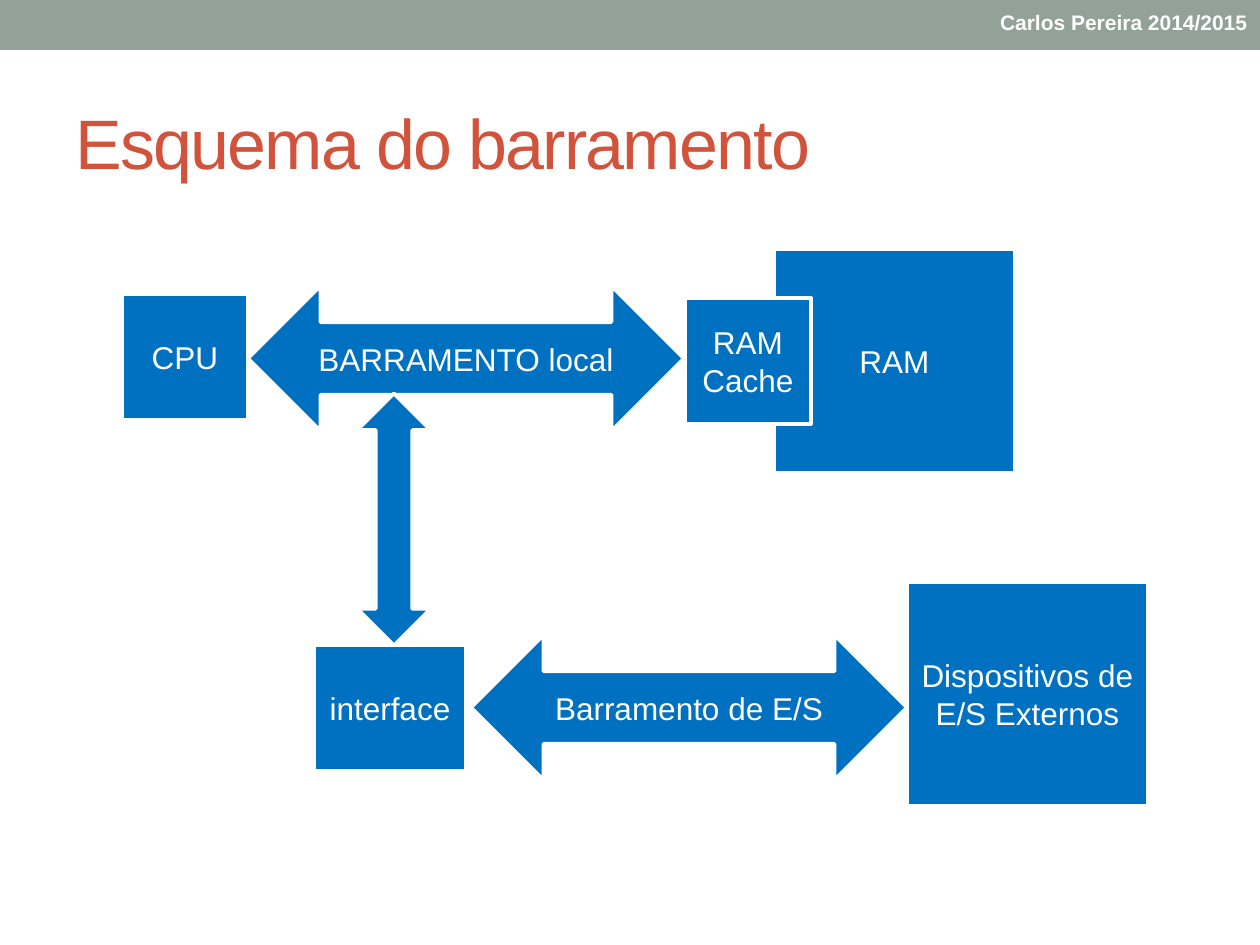
"""Build the bus diagram slide."""
from pptx import Presentation
from pptx import util as u
from pptx.dml.color import RGBColor
from pptx.enum import shapes, text

PX = u.Inches(1) // 126
COLORS = {"header": "93A299", "title": "D2533C", "block": "0070C0", "white": "FFFFFF"}
BOX = shapes.MSO_SHAPE.RECTANGLE
ARROW = shapes.MSO_SHAPE.LEFT_RIGHT_ARROW
UNIT = 126
MEMORY_SIZE = (241, 224)
BUS_SIZE = (436, 145)


def color(name):
    """Return the named colour."""
    return RGBColor.from_string(COLORS[name])


def emu(*lengths):
    """Convert pixel lengths to EMU."""
    return [length * PX for length in lengths]


def write(shape, content, points=18, ink="white", align=text.PP_ALIGN.CENTER,
          bold=False, spacing=None):
    """Write formatted lines, one paragraph each, centred vertically."""
    frame = shape.text_frame
    frame.word_wrap = True
    frame.vertical_anchor = text.MSO_ANCHOR.MIDDLE
    frame.text = content
    for paragraph in frame.paragraphs:
        paragraph.alignment = align
        for run in paragraph.runs:
            run.font.name = "Arial"
            run.font.size = u.Pt(points)
            run.font.bold = bold
            run.font.color.rgb = color(ink)
            if spacing is not None:
                run.font._element.set("spc", str(spacing))


def add_block(slide, kind, position, size, label="", fill="block", outline="white",
              rotation=0):
    """Add a filled shape with an optional outline and label."""
    shape = slide.shapes.add_shape(kind, *emu(*position, *size))
    shape.shadow.inherit = False
    shape.rotation = rotation
    shape.fill.solid()
    shape.fill.fore_color.rgb = color(fill)
    if outline:
        shape.line.color.rgb = color(outline)
        shape.line.width = u.Pt(2.08)
    else:
        shape.line.fill.background()
    if label:
        write(shape, label)


def add_label(slide, position, size, content, **style):
    """Add a text box."""
    write(slide.shapes.add_textbox(*emu(*position, *size)), content, **style)


def main():
    """Create and save the slide."""
    presentation = Presentation()
    presentation.slide_width, presentation.slide_height = emu(1260, 945)
    slide = presentation.slides.add_slide(presentation.slide_layouts[6])

    add_block(slide, BOX, (0, 0), (1260, 50), fill="header", outline=None)
    add_label(slide, (63, 73), (1134, 136), "Esquema do barramento", points=40,
              ink="title", align=text.PP_ALIGN.LEFT, spacing=-100)

    add_block(slide, BOX, (774, 249), MEMORY_SIZE, "RAM")
    add_block(slide, BOX, (122, 294), (UNIT, UNIT), "CPU")
    add_block(slide, ARROW, (248, 286), BUS_SIZE, "BARRAMENTO local")
    add_block(slide, ARROW, (268, 483), (2 * UNIT, 73), rotation=90)
    add_block(slide, BOX, (314, 645), (152, UNIT), "interface")
    add_block(slide, ARROW, (471, 635), BUS_SIZE, "Barramento de E/S")
    add_block(slide, BOX, (685, 298), (UNIT, UNIT), "RAM\nCache")
    add_block(slide, BOX, (907, 582), MEMORY_SIZE, "Dispositivos de E/S Externos")

    add_label(slide, (693, 0), (567, 45), "Carlos Pereira 2014/2015", points=12,
              align=text.PP_ALIGN.RIGHT, bold=True)
    presentation.save("out.pptx")


if __name__ == "__main__":
    main()
